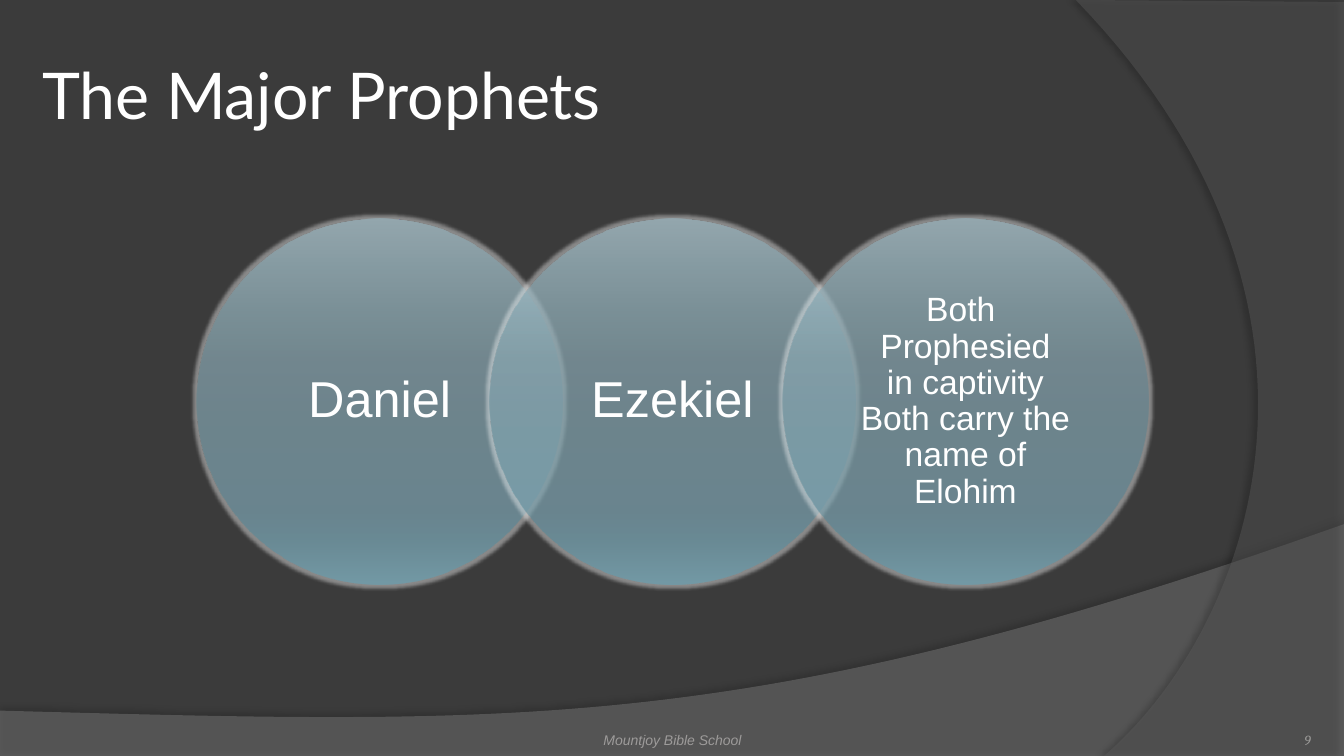
import pptx
import pptx.dml.color
import pptx.enum.shapes
import pptx.enum.text
import pptx.oxml
import pptx.oxml.ns
import pptx.util
from pptx.util import Inches

RGBColor = pptx.dml.color.RGBColor
PP_ALIGN = pptx.enum.text.PP_ALIGN
ANCHOR = pptx.enum.text.MSO_ANCHOR

BACKGROUND = RGBColor(0x3B, 0x3B, 0x3B)
BOTTOM_SWOOSH = RGBColor(0x7F, 0x7F, 0x7F)
SIDE_SWOOSH = RGBColor(0x5E, 0x5E, 0x5E)
WHITE = RGBColor(0xFF, 0xFF, 0xFF)
FOOTER_GREY = RGBColor(0x9D, 0x9B, 0x9A)
NUMBER_GREY = RGBColor(0x9B, 0x9A, 0x98)
CIRCLE_STOPS = [
    (0, RGBColor(0x9E, 0xC4, 0xD2)),
    (25, RGBColor(0x6C, 0x97, 0xA5)),
    (38, RGBColor(0x5B, 0x86, 0x94)),
    (55, RGBColor(0x51, 0x80, 0x8F)),
    (80, RGBColor(0x4A, 0x82, 0x94)),
    (88, RGBColor(0x4A, 0x8B, 0xA0)),
    (100, RGBColor(0x5D, 0xAA, 0xC2)),
]


def add_xml(parent, tag, attributes, color, alpha):
    """Append a drawing element that holds one transparent colour."""
    parent.append(pptx.oxml.parse_xml(
        f'<a:{tag} {pptx.oxml.ns.nsdecls("a")} {attributes}>'
        f'<a:srgbClr val="{color}"><a:alpha val="{alpha * 1000}"/></a:srgbClr></a:{tag}>'))


def add_text(place, text, font, size, color, align, anchor, margins):
    box = page.shapes.add_textbox(*[Inches(length) for length in place])
    frame = box.text_frame
    frame.word_wrap = True
    frame.vertical_anchor = anchor
    (frame.margin_left, frame.margin_top,
     frame.margin_right, frame.margin_bottom) = [Inches(margin) for margin in margins]
    para = frame.paragraphs[0]
    para.text = text
    para.alignment = align
    for span in para.runs:
        span.font.name = font
        span.font.size = pptx.util.Pt(size)
        span.font.color.rgb = color
    return para


deck = pptx.Presentation()
deck.slide_width = Inches(13.33)
deck.slide_height = Inches(7.5)
page = deck.slides.add_slide(deck.slide_layouts[6])
page.background.fill.solid()
page.background.fill.fore_color.rgb = BACKGROUND

# Swooshes: straight corners, then one Bezier curve back to the first corner
swooshes = [
    ([(0, 7.05), (0, 7.51), (13.33, 7.51)],
     [(13.33, 5.2), (7.45, 7.29), (5.21, 7.19), (0, 7.05)],
     BOTTOM_SWOOSH, 45, 35, 3.5, 270),
    ([(13.33, 0.02), (13.33, 7.5)],
     [(10.95, 7.5), (12.46, 6.19), (13.57, 3), (10.67, 0)],
     SIDE_SWOOSH, 40, 45, 4, 180),
]
CURVE_STEPS = 60
for corners, controls, color, alpha, shadow_alpha, distance, direction in swooshes:
    points = list(corners)
    for step in range(CURVE_STEPS + 1):
        t = step / CURVE_STEPS
        weights = [(1 - t) ** 3, 3 * t * (1 - t) ** 2, 3 * t ** 2 * (1 - t), t ** 3]
        points.append([sum(w * c[axis] for w, c in zip(weights, controls)) for axis in (0, 1)])
    outline = [(Inches(x), Inches(y)) for x, y in points]
    builder = page.shapes.build_freeform(*outline[0])
    builder.add_line_segments(outline[1:], close=True)
    swoosh = builder.convert_to_shape()
    swoosh.fill.background()
    swoosh.fill.solid()
    swoosh.fill.fore_color.rgb = color
    color_node = swoosh.element.spPr.find(".//" + pptx.oxml.ns.qn("a:srgbClr"))
    color_node.append(pptx.oxml.parse_xml(
        f'<a:alpha {pptx.oxml.ns.nsdecls("a")} val="{alpha * 1000}"/>'))
    swoosh.line.fill.background()
    swoosh.shadow.inherit = False
    effects = swoosh.element.spPr.find(pptx.oxml.ns.qn("a:effectLst"))
    add_xml(effects, "outerShdw",
            f'blurRad="{pptx.util.Pt(4)}" dist="{pptx.util.Pt(distance)}" '
            f'dir="{direction * 60000}" algn="ctr" rotWithShape="0"',
            "000000", shadow_alpha)

add_text((0.37, 0.3, 12.6, 1.25), "The Major Prophets", "Lato", 46, WHITE,
         PP_ALIGN.LEFT, ANCHOR.MIDDLE, (0.05, 0.05, 0.05, 0.05))

# Overlapping circles
DIAMETER = 3.63
PITCH = 2.905
TEXT_INSET = 0.53
TEXT_SIDE = 2.57
circles = [
    ("Daniel", 36, 0.05),
    ("Ezekiel", 36, 0.05),
    ("Both \vProphesied\vin captivity\vBoth carry the name of\vElohim", 24, 0.03),
]
for index, (label, size, margin) in enumerate(circles):
    left, top = 1.95 + index * PITCH, 2.17
    circle = page.shapes.add_shape(
        pptx.enum.shapes.MSO_SHAPE.OVAL,
        Inches(left), Inches(top), Inches(DIAMETER), Inches(DIAMETER))
    circle.fill.gradient()
    circle.fill.gradient_angle = 270
    stops = circle.element.spPr.find(".//" + pptx.oxml.ns.qn("a:gsLst"))
    for stop in list(stops):
        stops.remove(stop)
    for position, color in CIRCLE_STOPS:
        add_xml(stops, "gs", f'pos="{position * 1000}"', color, 50)
    circle.line.fill.background()
    circle.shadow.inherit = False
    effects = circle.element.spPr.find(pptx.oxml.ns.qn("a:effectLst"))
    add_xml(effects, "glow", f'rad="{pptx.util.Pt(5)}"', WHITE, 40)

    para = add_text((left + TEXT_INSET, top + TEXT_INSET, TEXT_SIDE, TEXT_SIDE),
                    label, "Arial", size, WHITE, PP_ALIGN.CENTER, ANCHOR.MIDDLE,
                    (0.2, margin, 0.2, margin))
    para.line_spacing = 0.9

footer = add_text((4.56, 7.02, 4.22, 0.4), "Mountjoy Bible School", "Arial", 10, FOOTER_GREY,
                  PP_ALIGN.CENTER, ANCHOR.BOTTOM, (0, 0.05, 0, 0))
number = add_text((11.89, 7.02, 1.11, 0.4), "9", "Cambria", 10, NUMBER_GREY,
                  PP_ALIGN.RIGHT, ANCHOR.BOTTOM, (0, 0, 0, 0))
for para in (footer, number):
    para.runs[0].font.italic = True

deck.save("out.pptx")
